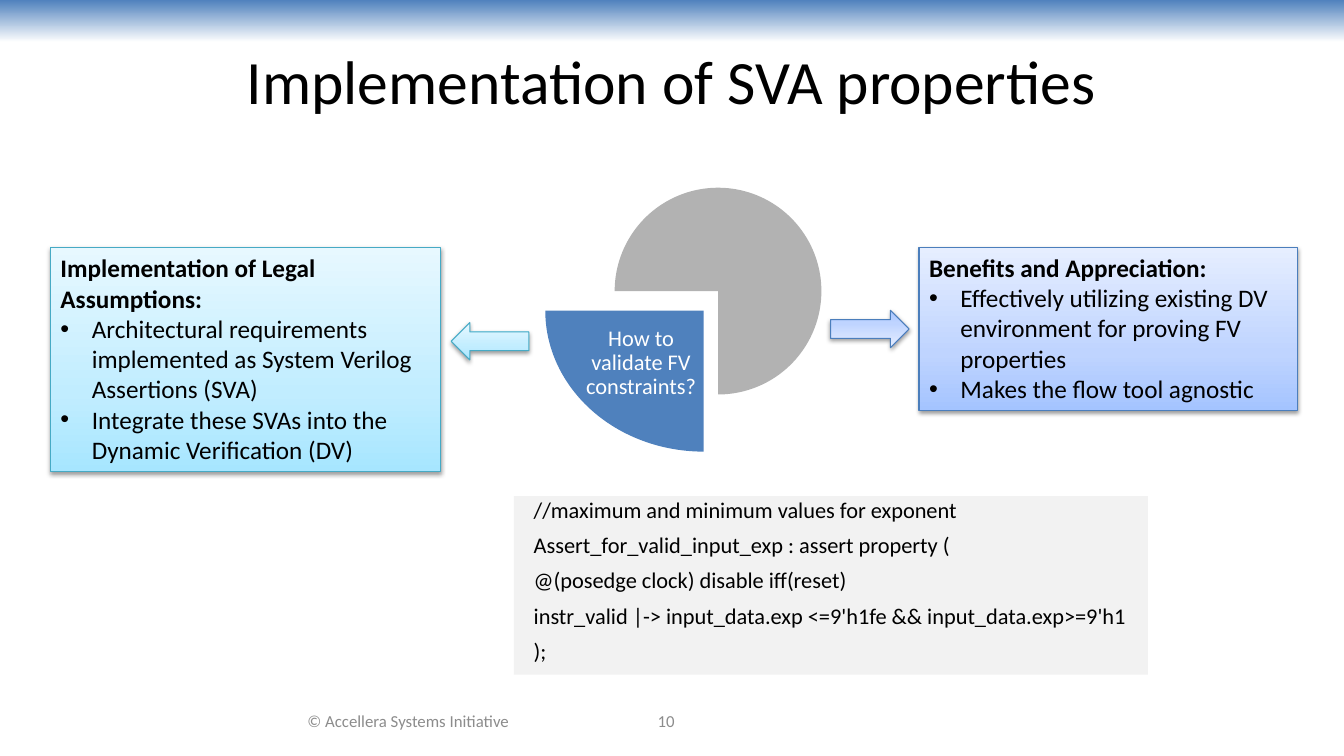
import copy
from dataclasses import dataclass
from typing import Any

import lxml.etree
import pptx
import pptx.dml.color
import pptx.enum.shapes
import pptx.enum.text
import pptx.oxml
import pptx.oxml.ns
import pptx.util

Cm = pptx.util.Cm
Pt = pptx.util.Pt
Geometry = pptx.enum.shapes.MSO_SHAPE
Align = pptx.enum.text.PP_ALIGN
Anchor = pptx.enum.text.MSO_ANCHOR
AutoSize = pptx.enum.text.MSO_AUTO_SIZE
qn = pptx.oxml.ns.qn

FONT = "Calibri"
COLORS = {
    "black": "000000", "white": "FFFFFF", "footer": "8C8C8C", "code": "F2F2F2",
    "blue": "4F81BD", "gray": "B2B2B2", "aqua_line": "46AAC5", "blue_line": "4B7EBC",
}
BAR_STOPS = ((0, COLORS["blue"]), (1, COLORS["white"]))
BULLET_INDENT = Cm(0.79)
QUARTER_TURN = 54


@dataclass(frozen=True)
class Box:
    left: float
    top: float
    width: float
    height: float

    def emu(self) -> tuple[int, ...]:
        return tuple(Cm(v) for v in (self.left, self.top, self.width, self.height))


@dataclass(frozen=True)
class Theme:
    stops: tuple[tuple[float, str], ...]
    line: str


@dataclass(frozen=True)
class Panel:
    box: Box
    theme: Theme
    heading: str
    bullets: tuple[str, ...]


@dataclass(frozen=True)
class Arrow:
    box: Box
    theme: Theme
    rotation: int


@dataclass(frozen=True)
class Sector:
    box: Box
    color: str
    first_quarter: int
    last_quarter: int


@dataclass(frozen=True)
class Label:
    box: Box
    text: str
    size: int
    color: str
    inset: float
    spacing: float


AQUA = Theme(((0, "A7E6FF"), (0.35, "C1EDFF"), (1, "E7F8FF")), COLORS["aqua_line"])
BLUE = Theme(((0, "A4C4FF"), (0.35, "BFD4FF"), (1, "E6EEFF")), COLORS["blue_line"])

PANELS = (
    Panel(Box(1.27, 6.24, 9.83, 5.64), AQUA, "Implementation of Legal Assumptions:", (
        "Architectural requirements implemented as System Verilog Assertions (SVA)",
        "Integrate these SVAs into the Dynamic Verification (DV)")),
    Panel(Box(23.16, 6.23, 9.53, 4.11), BLUE, "Benefits and Appreciation:", (
        "Effectively utilizing existing DV environment for proving FV properties",
        "Makes the flow tool agnostic")),
)
ARROWS = (
    Arrow(Box(11.37, 8.13, 1.96, 0.94), AQUA, 0),
    Arrow(Box(20.93, 7.82, 1.98, 0.94), BLUE, 180),
)
SECTORS = (
    Sector(Box(13.74, 4.27, 7.98, 7.11), COLORS["blue"], 3, 0),
    Sector(Box(15.49, 4.73, 5.21, 5.21), COLORS["gray"], 0, 3),
)
LABELS = (
    Label(Box(14.68, 7.92, 2.95, 2.46), "How to validate FV constraints?",
          16, COLORS["white"], 0.05, 0.9),
    Label(Box(6.2, 17.65, 8.18, 1.02), "© Accellera Systems Initiative",
          12, COLORS["footer"], 0.25, 1),
    Label(Box(13.54, 17.65, 6.5, 1.02), "10", 12, COLORS["footer"], 0.25, 1),
)
CODE_BOX = Box(12.95, 12.5, 15.98, 4.5)
CODE_LINES = (
    "//maximum and minimum values for exponent",
    "Assert_for_valid_input_exp : assert property (",
    "@(posedge clock) disable iff(reset)",
    "instr_valid |-> input_data.exp <=9'h1fe && input_data.exp>=9'h1",
    ");",
)


def rgb(color: str) -> pptx.dml.color.RGBColor:
    return pptx.dml.color.RGBColor.from_string(color)


def place(shape: Any, box: Box) -> None:
    shape.left, shape.top, shape.width, shape.height = box.emu()


def style(paragraph: Any, size: int, color: str, bold: bool = False) -> None:
    paragraph.font.name = FONT
    paragraph.font.size = Pt(size)
    paragraph.font.bold = bold
    paragraph.font.color.rgb = rgb(color)


def indent(paragraph: Any, margin: int, first: int) -> Any:
    properties = paragraph._p.get_or_add_pPr()
    properties.set("marL", str(margin))
    properties.set("indent", str(first))
    return properties


def set_insets(frame: Any, inset: float) -> None:
    frame.margin_left = frame.margin_right = Cm(inset)
    frame.margin_top = frame.margin_bottom = Cm(inset)


def fill_gradient(shape: Any, stops: tuple[tuple[float, str], ...], angle: int) -> None:
    shape.fill.gradient()
    stop_list = next(shape._element.spPr.iter(qn("a:gsLst")))
    for _ in range(len(stops) - len(stop_list)):
        stop_list.append(copy.deepcopy(stop_list[-1]))
    for stop, (position, color) in zip(shape.fill.gradient_stops, stops):
        stop.position = position
        stop.color.rgb = rgb(color)
    shape.fill.gradient_angle = angle


def apply_theme(shape: Any, theme: Theme) -> None:
    fill_gradient(shape, theme.stops, 90)
    shape.line.color.rgb = rgb(theme.line)
    shape.line.width = Pt(0.75)
    shape.shadow.inherit = False
    effects = shape._element.spPr.find(qn("a:effectLst"))
    shadow = lxml.etree.SubElement(effects, qn("a:outerShdw"), blurRad="40000",
                                   dist="20000", dir="5400000", rotWithShape="0")
    tint = lxml.etree.SubElement(shadow, qn("a:srgbClr"), val=COLORS["black"])
    lxml.etree.SubElement(tint, qn("a:alpha"), val="38000")


def add_plain(slide: Any, geometry: Any, box: Box, color: str) -> Any:
    shape = slide.shapes.add_shape(geometry, *box.emu())
    shape.shadow.inherit = False
    shape.fill.solid()
    shape.fill.fore_color.rgb = rgb(color)
    shape.line.fill.background()
    return shape


def fill_panel(body: Any, panel: Panel) -> None:
    place(body, panel.box)
    apply_theme(body, panel.theme)
    frame = body.text_frame
    frame.text = "\n".join((panel.heading, *panel.bullets))
    frame.word_wrap = True
    frame.auto_size = AutoSize.NONE
    frame.vertical_anchor = Anchor.TOP
    for number, paragraph in enumerate(frame.paragraphs):
        paragraph.space_before = Pt(0)
        if number:
            properties = indent(paragraph, BULLET_INDENT, -BULLET_INDENT)
            lxml.etree.SubElement(properties, qn("a:buFont"), typeface="Arial")
            lxml.etree.SubElement(properties, qn("a:buChar"), char="•")
        else:
            lxml.etree.SubElement(indent(paragraph, 0, 0), qn("a:buNone"))
        style(paragraph, 18, COLORS["black"], bold=number == 0)


def add_arrow(slide: Any, arrow: Arrow) -> None:
    shape = slide.shapes.add_shape(Geometry.LEFT_ARROW, *arrow.box.emu())
    shape.rotation = arrow.rotation
    apply_theme(shape, arrow.theme)


def add_sector(slide: Any, sector: Sector) -> None:
    shape = add_plain(slide, Geometry.PIE, sector.box, sector.color)
    shape.rotation = 180
    for side, quarter in enumerate((sector.first_quarter, sector.last_quarter)):
        shape.adjustments[side] = quarter * QUARTER_TURN


def add_label(slide: Any, label: Label) -> None:
    frame = slide.shapes.add_textbox(*label.box.emu()).text_frame
    frame.word_wrap = True
    frame.vertical_anchor = Anchor.MIDDLE
    set_insets(frame, label.inset)
    frame.text = label.text
    paragraph = frame.paragraphs[0]
    paragraph.alignment = Align.CENTER
    paragraph.line_spacing = label.spacing
    style(paragraph, label.size, label.color)


def add_code(slide: Any) -> None:
    frame = add_plain(slide, Geometry.RECTANGLE, CODE_BOX, COLORS["code"]).text_frame
    frame.text = "\n".join(CODE_LINES)
    frame.word_wrap = True
    frame.vertical_anchor = Anchor.TOP
    set_insets(frame, 0)
    for number, paragraph in enumerate(frame.paragraphs):
        indent(paragraph, Cm(0.5), 0)
        paragraph.alignment = Align.LEFT
        paragraph.space_before = Pt(3 if number else 0)
        paragraph.space_after = Pt(3)
        style(paragraph, 16, COLORS["black"])


def main() -> None:
    deck = pptx.Presentation()
    deck.slide_width, deck.slide_height = Cm(33.87), Cm(19.05)
    slide = deck.slides.add_slide(deck.slide_layouts[3])
    title, *bodies = slide.placeholders

    bar = add_plain(slide, Geometry.RECTANGLE, Box(0, 0, 33.87, 1.07), COLORS["blue"])
    fill_gradient(bar, BAR_STOPS, 270)
    slide.shapes._spTree.insert(2, bar._element)

    place(title, Box(1.69, 0.43, 30.48, 3.18))
    title.text_frame.text = "Implementation of SVA properties"
    title.text_frame.vertical_anchor = Anchor.MIDDLE
    title.text_frame.paragraphs[0].alignment = Align.CENTER
    style(title.text_frame.paragraphs[0], 44, COLORS["black"])

    for body, panel in zip(bodies, PANELS):
        fill_panel(body, panel)
    add_code(slide)
    for arrow in ARROWS:
        add_arrow(slide, arrow)
    for sector in SECTORS:
        add_sector(slide, sector)
    for label in LABELS:
        add_label(slide, label)
    deck.save("out.pptx")


if __name__ == "__main__":
    main()
